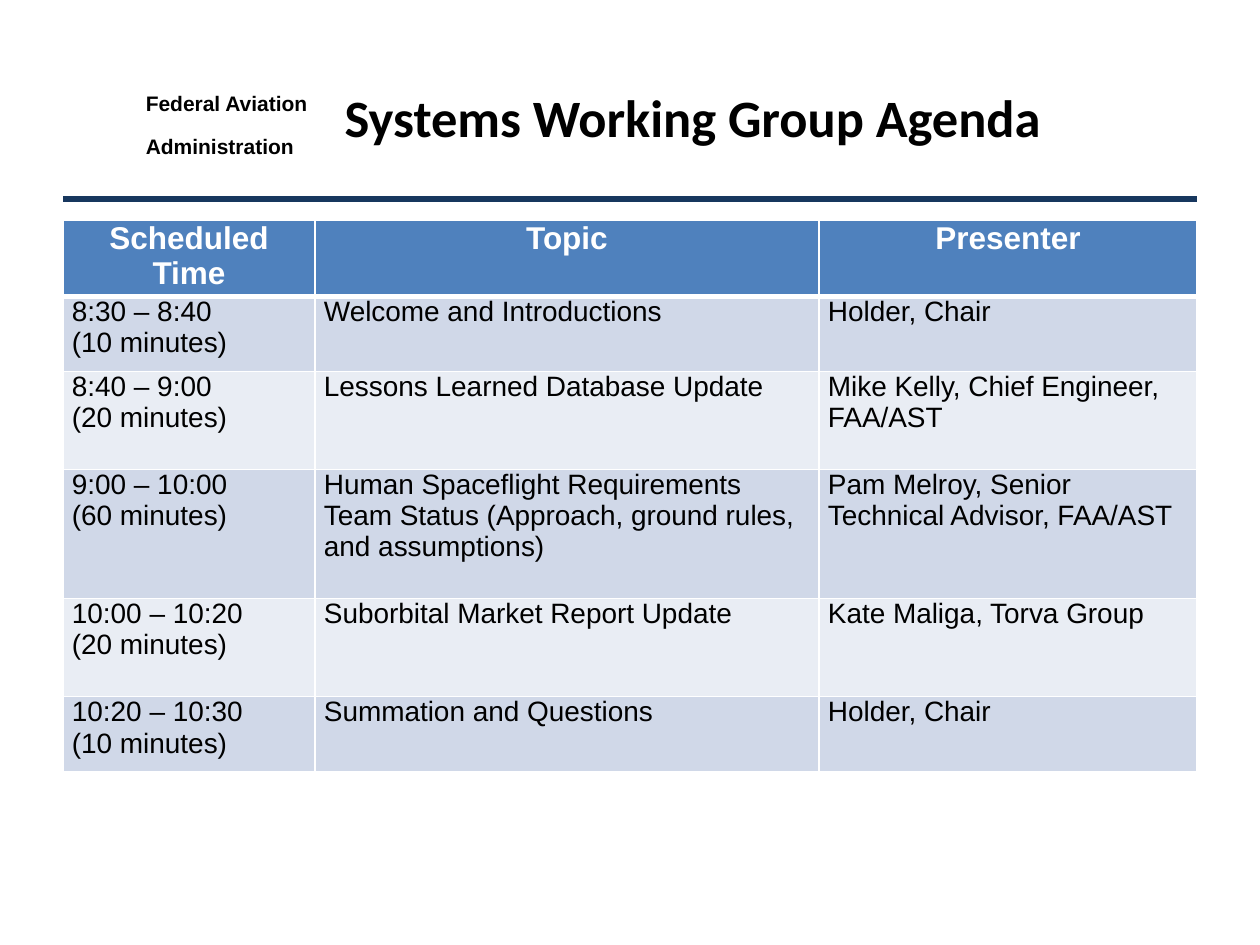
from copy import deepcopy

from lxml import etree
from pptx import Presentation, dml, util as u
from pptx.dml import color
from pptx.enum import shapes, text
from pptx.oxml import ns

HEADERS = ["Scheduled Time", "Topic", "Presenter"]
SESSIONS = [
    ("8:30 – 8:40\n(10 minutes)", "Welcome and Introductions", "Holder, Chair"),
    ("8:40 – 9:00\n(20 minutes)", "Lessons Learned Database Update",
     "Mike Kelly, Chief Engineer, FAA/AST"),
    ("9:00 – 10:00\n(60 minutes)",
     "Human Spaceflight Requirements Team Status (Approach, ground rules, and assumptions)",
     "Pam Melroy, Senior Technical Advisor, FAA/AST"),
    ("10:00 – 10:20\n(20 minutes)", "Suborbital Market Report Update",
     "Kate Maliga, Torva Group"),
    ("10:20 – 10:30\n(10 minutes)", "Summation and Questions", "Holder, Chair"),
]
COLUMN_WIDTHS = [5.08, 10.16, 7.62]
ROW_HEIGHTS = [1.51, 1.51, 1.98, 2.6, 1.98, 1.51]


def rgb(value):
    return color.RGBColor.from_string(value)


def write(tf, content, size=16, font="Arial", fill="000000", bold=False,
          align=text.PP_ALIGN.LEFT, after=0):
    for i, line in enumerate(content if isinstance(content, list) else [content]):
        p = tf.paragraphs[0] if i == 0 else tf.add_paragraph()
        p.text = line
        p.alignment = align
        p.space_after = u.Pt(after)
        for r in p.runs:
            r.font.size, r.font.name, r.font.bold = u.Pt(size), font, bold
            r.font.color.rgb = rgb(fill)
        for br in p._p.findall(ns.qn("a:br")):
            br.insert(0, deepcopy(p.runs[0]._r.rPr))


class AgendaSlide:
    """Holds the agenda style and the slide being built."""

    navy, header, bands, white = "17375E", "4F81BD", ("E9EDF4", "D0D8E8"), "FFFFFF"

    def __init__(self, prs):
        self.s = prs.slides.add_slide(prs.slide_layouts[6])

    def textbox(self, x, y, w, h, content, anchor=text.MSO_ANCHOR.TOP, **style):
        tf = self.s.shapes.add_textbox(u.Cm(x), u.Cm(y), u.Cm(w), u.Cm(h)).text_frame
        tf.word_wrap = True
        tf.vertical_anchor = anchor
        write(tf, content, **style)

    def rule(self, x1, x2, y):
        line = self.s.shapes.add_connector(
            shapes.MSO_CONNECTOR.STRAIGHT, u.Cm(x1), u.Cm(y), u.Cm(x2), u.Cm(y))
        line.line.color.rgb = rgb(self.navy)
        line.line.width = u.Pt(3)
        etree.SubElement(line._element.spPr, ns.qn("a:effectLst"))

    def border(self, cell, side, width):
        ln = etree.SubElement(cell._tc.get_or_add_tcPr(), ns.qn(f"a:ln{side}"),
                              w=str(u.Pt(width)))
        fill = etree.SubElement(ln, ns.qn("a:solidFill"))
        etree.SubElement(fill, ns.qn("a:srgbClr"), val=self.white)

    def cell(self, cell, content, row):
        cell.margin_left = cell.margin_right = u.Cm(0.18)
        cell.margin_top = cell.margin_bottom = 0
        thick = {(0, "B"), (1, "T")}
        for side in "LRTB":
            self.border(cell, side, 3 if (row, side) in thick else 1)
        cell.fill.solid()
        cell.fill.fore_color.rgb = rgb(self.bands[row % 2] if row else self.header)
        style = {} if row else dict(size=18, fill=self.white, bold=True,
                                    align=text.PP_ALIGN.CENTER)
        write(cell.text_frame, content, **style)

    def table(self, x, y, rows, widths, heights):
        table = self.s.shapes.add_table(
            len(rows), len(widths), u.Cm(x), u.Cm(y),
            u.Cm(sum(widths)), u.Cm(sum(heights))).table
        for column, width in zip(table.columns, widths):
            column.width = u.Cm(width)
        for i, (row, height) in enumerate(zip(rows, heights)):
            table.rows[i].height = u.Cm(height)
            for j, content in enumerate(row):
                self.cell(table.cell(i, j), content, i)


def main():
    prs = Presentation()
    prs.slide_width, prs.slide_height = u.Cm(25.4), u.Cm(19.05)
    agenda = AgendaSlide(prs)
    agenda.textbox(2.69, 1.7, 3.96, 1.35, ["Federal Aviation", "Administration"],
                   size=12, bold=True, after=10)
    agenda.rule(1.27, 24.13, 4.01)
    agenda.textbox(6.35, 0.76, 15.24, 3.18, "Systems Working Group Agenda",
                   anchor=text.MSO_ANCHOR.MIDDLE, size=30, font="Calibri",
                   bold=True, align=text.PP_ALIGN.CENTER)
    agenda.table(1.27, 4.45, [HEADERS, *SESSIONS], COLUMN_WIDTHS, ROW_HEIGHTS)
    prs.save("out.pptx")


if __name__ == "__main__":
    main()
